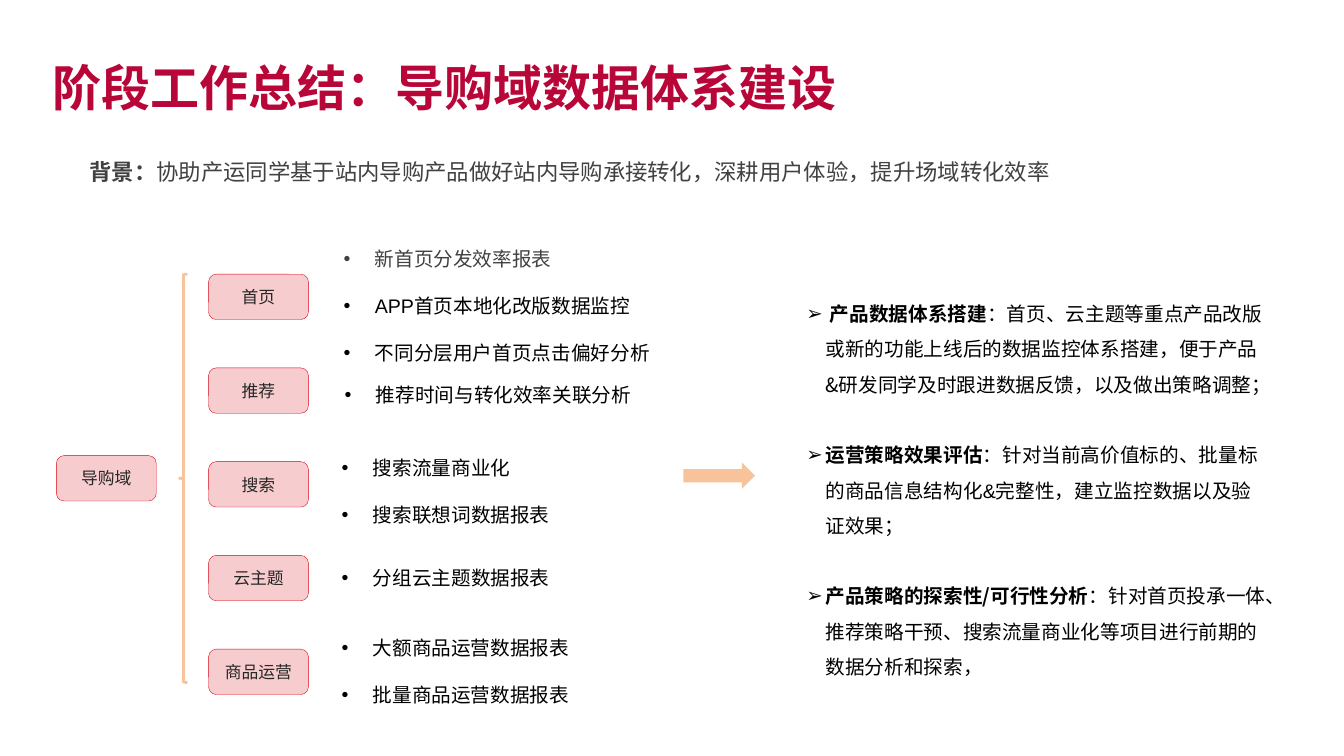
import pptx
import pptx.util
import pptx.dml.color
import pptx.enum.shapes
import pptx.enum.text
import pptx.oxml
import pptx.oxml.ns

Pt = pptx.util.Pt
Kind = pptx.enum.shapes.MSO_SHAPE
Align = pptx.enum.text.PP_ALIGN
Anchor = pptx.enum.text.MSO_ANCHOR
qn = pptx.oxml.ns.qn

HUE = {"title": "B80638", "grey": "414141", "black": "000000",
       "node": "262626", "red": "D70111", "peach": "F8C39A"}
SANS, ARIAL = "Noto Sans CJK SC", "Arial"
WIDE, HIGH = pptx.util.Inches(13.33), pptx.util.Inches(7.5)
COL, ROW = WIDE / 160, HIGH / 90  # grid of 160 columns by 90 rows
NODE = (11.88, 5.4)
STEP = 11.16  # rows from one branch to the next

BRANCH = ["首页", "推荐", "搜索", "云主题", "商品运营"]
# column, row, width and height inside the tree box, then the items
LISTS = [
    (33, 0, 40.56, 18.12, ["新首页分发效率报表", "APP首页本地化改版数据监控",
                           "不同分层用户首页点击偏好分析"]),
    (33.12, 16.2, 40.56, 4.08, ["推荐时间与转化效率关联分析"]),
    (32.76, 24.84, 38.16, 9.72, ["搜索流量商业化", "搜索联想词数据报表"]),
    (32.76, 38.04, 34.56, 6.84, ["分组云主题数据报表"]),
    (32.76, 46.32, 36, 9.72, ["大额商品运营数据报表", "批量商品运营数据报表"]),
]
# bold lead, then plain runs with their fonts
POINTS = [
    (" 产品数据体系搭建",
     [("：首页、云主题等重点产品改版或新的功能上线后的数据监控体系搭建，"
       "便于产品&研发同学及时跟进数据反馈，以及做出策略调整；", SANS)]),
    ("运营策略效果评估",
     [("：针对当前高价值标的、批量标的", SANS), ("商品信息结构化&完整性", ARIAL),
      ("，建立监控数据以及验证效果；", SANS)]),
    ("产品策略的探索性/可行性分析",
     [("：针对首页投承一体、推荐策略干预、搜索流量商业化等项目进行前期的数据分析和探索，", SANS)]),
]


def rgb(key):
    return pptx.dml.color.RGBColor.from_string(HUE[key])


def grid(x, y, w, h):
    return [round(n) for n in (x * COL, y * ROW, w * COL, h * ROW)]


def move(shape, box):
    shape.left, shape.top, shape.width, shape.height = grid(*box)


def style(para, size, hue, face=SANS):
    font = para.font
    font.size, font.name = Pt(size), face
    font.color.rgb = rgb(hue)
    east = para._p.pPr.find(qn("a:defRPr")).makeelement(qn("a:ea"), {"typeface": SANS})
    para._p.pPr.find(qn("a:defRPr")).find(qn("a:latin")).addnext(east)


def bullet(para, mark, inset):
    props = para._p.get_or_add_pPr()
    props.set("marL", str(round(inset * COL)))
    props.set("indent", str(-round(inset * COL)))
    for tag, key, value in (("a:buFont", "typeface", ARIAL), ("a:buChar", "char", mark)):
        item = props.makeelement(qn(tag), {key: value})
        props.append(item)


def add_run(para, text, bold=False, face=None):
    run = para.add_run()
    run.text, run.font.bold = text, bold
    if face:
        run.font.name = face


def paras(frame, count):
    """Yield the first paragraph of the frame, then new ones."""
    for i in range(count):
        yield frame.add_paragraph() if i else frame.paragraphs[0]


def text_box(slide, box):
    frame = slide.shapes.add_textbox(*grid(*box)).text_frame
    frame.word_wrap = True
    return frame


def solid(slide, kind, box, hue=None):
    shape = slide.shapes.add_shape(kind, *grid(*box))
    shape.shadow.inherit = False
    if hue:
        shape.fill.solid()
        shape.fill.fore_color.rgb = rgb(hue)
    else:
        shape.fill.background()
    shape.line.fill.background()
    return shape


def outline(shape, hue, width):
    shape.line.color.rgb = rgb(hue)
    shape.line.width = Pt(width)


def title(slide, box):
    shape = slide.shapes.title
    move(shape, box)
    frame = shape.text_frame
    frame.margin_left = frame.margin_right = Pt(2)
    frame.margin_top = frame.margin_bottom = Pt(2)
    frame.word_wrap = False
    frame.auto_size = pptx.enum.text.MSO_AUTO_SIZE.NONE
    frame.vertical_anchor = Anchor.MIDDLE
    para = frame.paragraphs[0]
    para.alignment = Align.LEFT
    style(para, 35, "title")
    add_run(para, "阶段工作总结：导购域数据体系建设", True)


def background(slide, box):
    para = text_box(slide, box).paragraphs[0]
    style(para, 16, "grey")
    add_run(para, "背景：", True)
    add_run(para, "协助产运同学基于站内导购产品做好站内导购承接转化，深耕用户体验，提升场域转化效率")


def node(slide, x, y, name):
    shape = solid(slide, Kind.ROUNDED_RECTANGLE, (x, y, *NODE), "red")
    tint = shape._element.spPr.find(qn("a:solidFill"))[0]
    tint.append(tint.makeelement(qn("a:alpha"), {"val": "20000"}))
    outline(shape, "red", 0.25)
    frame = shape.text_frame
    frame.vertical_anchor = Anchor.MIDDLE
    frame.margin_left = frame.margin_right = 0
    para = frame.paragraphs[0]
    para.alignment = Align.CENTER
    style(para, 12, "node")
    add_run(para, name)


def tree(slide, x, y):
    """Root, brace, branches and the list of reports beside each branch."""
    node(slide, x, y + 25.44, "导购域")
    brace = solid(slide, Kind.LEFT_BRACE, (x + 14.64, y + 3.84, 0.96, 48.6))
    outline(brace, "peach", 2)
    for i, name in enumerate(BRANCH):
        node(slide, x + 18.12, y + 3.84 + i * STEP, name)
    for dx, dy, w, h, items in LISTS:
        frame = text_box(slide, (x + dx, y + dy, w, h))
        for i, para in enumerate(paras(frame, len(items))):
            lead = items is LISTS[0][-1] and i == 0
            bullet(para, "•", 3.72)
            para.space_before = Pt(16.8 if i else 0)
            style(para, 14, "grey" if lead else "black", SANS if lead else ARIAL)
            add_run(para, items[i])


def points(slide, box):
    shape = slide.placeholders[1]
    move(shape, box)
    frame = shape.text_frame
    frame.word_wrap = True
    frame.auto_size = pptx.enum.text.MSO_AUTO_SIZE.NONE
    for i, para in enumerate(paras(frame, len(POINTS))):
        lead, rest = POINTS[i]
        bullet(para, "➢", 2.28)
        para.line_spacing = 1.5
        para.space_before = Pt(25.2 if i else 0)
        style(para, 14, "black")
        add_run(para, lead, True)
        for text, face in rest:
            add_run(para, text, face=face if face != SANS else None)


def main():
    deck = pptx.Presentation()
    deck.slide_width, deck.slide_height = WIDE, HIGH
    slide = deck.slides.add_slide(deck.slide_layouts[1])
    title(slide, (5.88, 6.48, 95.4, 7.8))
    background(slide, (9.48, 18.24, 136.32, 7.68))
    tree(slide, 6.72, 28.8)
    solid(slide, Kind.RIGHT_ARROW, (81.36, 55.08, 8.52, 3.12), "peach")
    points(slide, (94.8, 33.96, 57.48, 54))
    deck.save("out.pptx")


if __name__ == "__main__":
    main()
